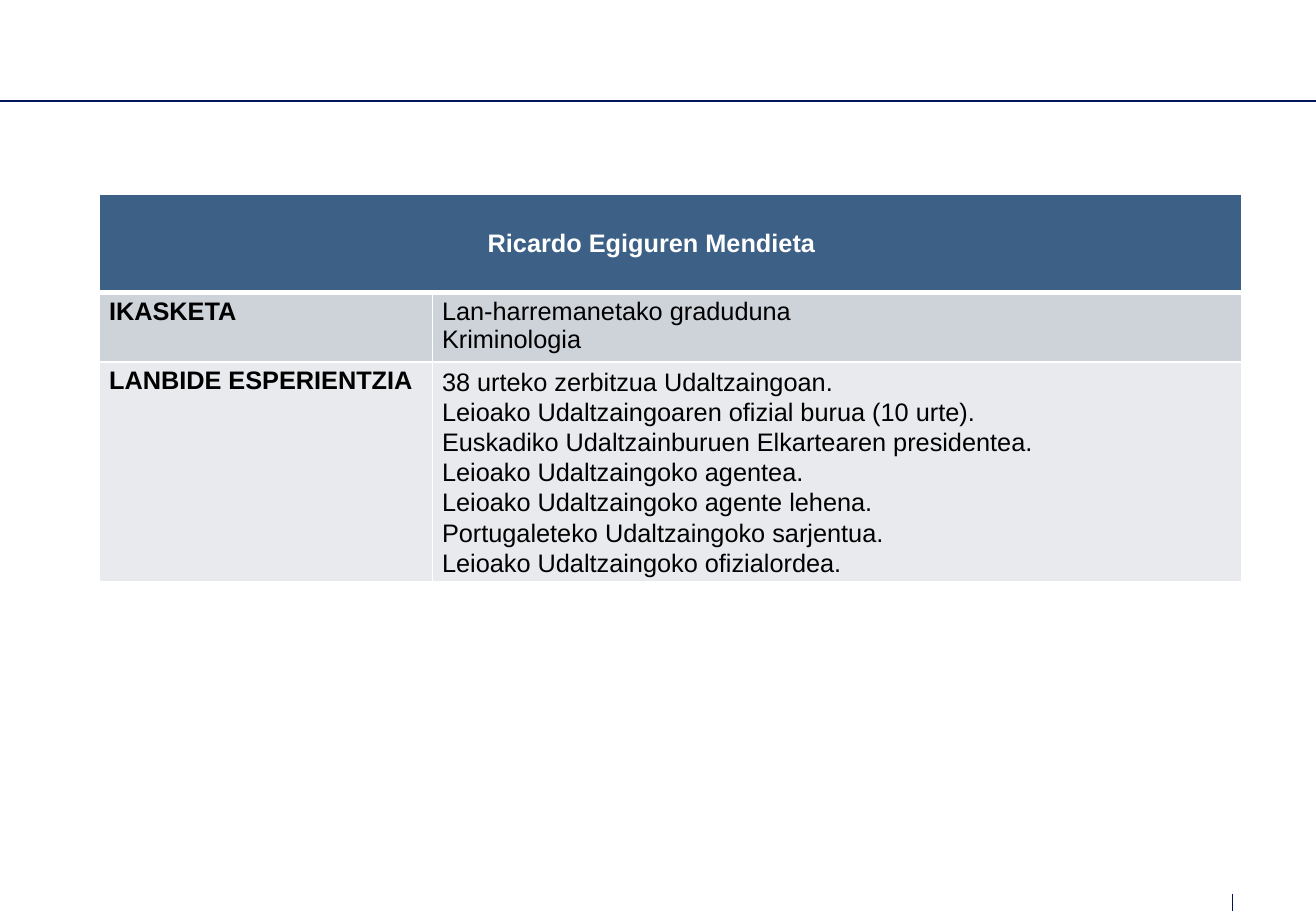
"""Build a slide with the studies and work experience of a police officer."""
from lxml.etree import SubElement
from pptx import Presentation
from pptx.dml.color import RGBColor
from pptx.enum.shapes import MSO_CONNECTOR
from pptx.enum.text import MSO_ANCHOR, PP_ALIGN
from pptx.oxml.ns import qn
from pptx.util import Cm, Pt

NAME = "Ricardo Egiguren Mendieta"
SECTIONS = [
    ("IKASKETA", ["Lan-harremanetako graduduna", "Kriminologia"], "CED2D9", 1.0),
    ("LANBIDE ESPERIENTZIA", [
        "38 urteko zerbitzua Udaltzaingoan.",
        "Leioako Udaltzaingoaren ofizial burua (10 urte).",
        "Euskadiko Udaltzainburuen Elkartearen presidentea.",
        "Leioako Udaltzaingoko agentea.",
        "Leioako Udaltzaingoko agente lehena.",
        "Portugaleteko Udaltzaingoko sarjentua.",
        "Leioako Udaltzaingoko ofizialordea.",
    ], "E8EAED", 1.07),
]
SLIDE_WIDTH, SLIDE_HEIGHT = 27.51, 19.05
RULES = [
    (25.76, 18.69, 25.76, SLIDE_HEIGHT),
    (0, 2.11, SLIDE_WIDTH, 2.11),
]
TABLE_LEFT, TABLE_TOP = 2.08, 4.06
COLUMN_WIDTHS = [6.96, 16.92]
ROW_HEIGHTS = [2.06, 1.45, 4.55]


def color(value):
    return RGBColor.from_string(value)


def add_rule(slide, ends):
    rule = slide.shapes.add_connector(MSO_CONNECTOR.STRAIGHT, *map(Cm, ends))
    rule.line.color.rgb = color("00135D")
    rule.line.width = Pt(0.75)
    SubElement(rule._element.spPr, qn("a:effectLst"))


def add_borders(cell, top, bottom):
    properties = cell._tc.get_or_add_tcPr()
    for side, width in (("L", 1), ("R", 1), ("T", top), ("B", bottom)):
        border = SubElement(properties, qn(f"a:ln{side}"), w=str(Pt(width)))
        fill = SubElement(border, qn("a:solidFill"))
        SubElement(fill, qn("a:srgbClr"), val="FFFFFF")


def fill_cell(cell, lines, fill, font_color="000000", bold=False, spacing=1.0):
    cell.fill.solid()
    cell.fill.fore_color.rgb = color(fill)
    cell.margin_left = cell.margin_right = Cm(0.2)
    cell.margin_top = cell.margin_bottom = Cm(0.1)
    cell.text_frame.text = "\n".join(lines)
    for paragraph in cell.text_frame.paragraphs:
        paragraph.line_spacing = spacing
        for run in paragraph.runs:
            run.font.name = "Arial"
            run.font.size = Pt(15)
            run.font.bold = bold
            run.font.color.rgb = color(font_color)


def add_profile_table(slide):
    table = slide.shapes.add_table(
        len(ROW_HEIGHTS), len(COLUMN_WIDTHS), Cm(TABLE_LEFT), Cm(TABLE_TOP),
        Cm(sum(COLUMN_WIDTHS)), Cm(sum(ROW_HEIGHTS))).table
    for column, width in zip(table.columns, COLUMN_WIDTHS):
        column.width = Cm(width)
    for index, (row, height) in enumerate(zip(table.rows, ROW_HEIGHTS)):
        row.height = Cm(height)
        for cell in row.cells:
            add_borders(cell, 3 if index == 1 else 1, 3 if index == 0 else 1)

    header = table.cell(0, 0)
    header.merge(table.cell(0, 1))
    fill_cell(header, [NAME], "3D6087", "FFFFFF", bold=True)
    header.margin_right = Cm(1)
    header.vertical_anchor = MSO_ANCHOR.MIDDLE
    header.text_frame.paragraphs[0].alignment = PP_ALIGN.CENTER

    for index, (label, lines, fill, spacing) in enumerate(SECTIONS, start=1):
        fill_cell(table.cell(index, 0), [label], fill, bold=True)
        fill_cell(table.cell(index, 1), lines, fill, spacing=spacing)


def main():
    presentation = Presentation()
    presentation.slide_width = Cm(SLIDE_WIDTH)
    presentation.slide_height = Cm(SLIDE_HEIGHT)
    slide = presentation.slides.add_slide(presentation.slide_layouts[6])
    for ends in RULES:
        add_rule(slide, ends)
    add_profile_table(slide)
    presentation.save("out.pptx")


if __name__ == "__main__":
    main()
